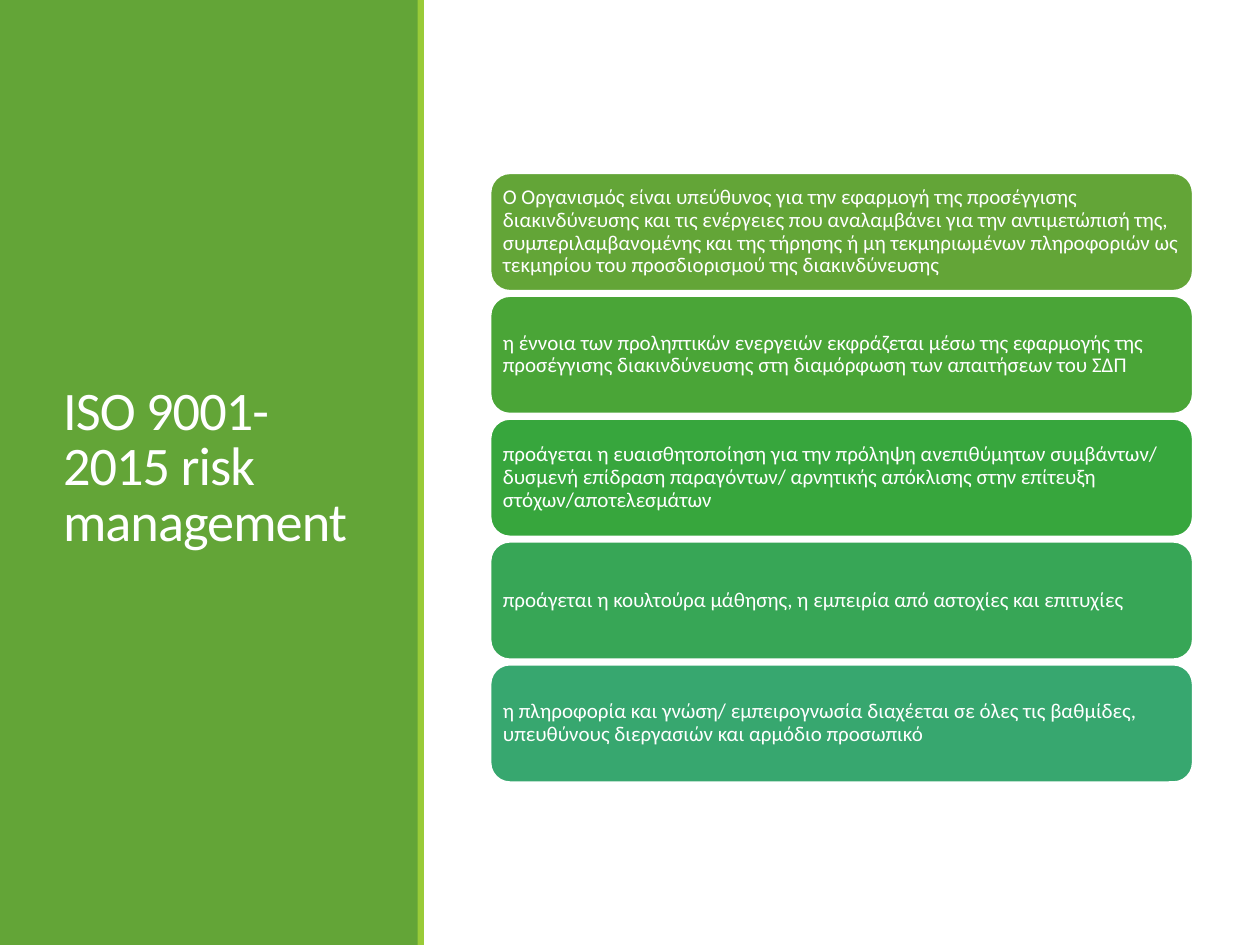
from pptx import Presentation
from pptx.dml.color import RGBColor
from pptx.enum.shapes import MSO_SHAPE
from pptx.enum.text import MSO_ANCHOR, MSO_AUTO_SIZE, PP_ALIGN
from pptx.util import Pt

RECT = MSO_SHAPE.RECTANGLE
ROUND = MSO_SHAPE.ROUNDED_RECTANGLE
MIDDLE = MSO_ANCHOR.MIDDLE
LEFT = PP_ALIGN.LEFT
NO_FIT = MSO_AUTO_SIZE.NONE

COLORS = {
    "white": "FFFFFF",
    "green": "63A537",
    "lime": "99CB38",
    "leaf": "4AA537",
    "grass": "37A63D",
    "jade": "37A656",
    "teal": "37A76F",
}

CARDS = [
    ("green", "Ο Οργανισμός είναι υπεύθυνος για την εφαρμογή της προσέγγισης "
     "διακινδύνευσης και τις ενέργειες που αναλαμβάνει για την αντιμετώπισή της, "
     "συμπεριλαμβανομένης και της τήρησης ή μη τεκμηριωμένων πληροφοριών ως "
     "τεκμηρίου του προσδιορισμού της διακινδύνευσης"),
    ("leaf", "η έννοια των προληπτικών ενεργειών εκφράζεται μέσω της εφαρμογής της "
     "προσέγγισης διακινδύνευσης στη διαμόρφωση των απαιτήσεων του ΣΔΠ"),
    ("grass", "προάγεται η ευαισθητοποίηση για την πρόληψη ανεπιθύμητων συμβάντων/ "
     "δυσμενή επίδραση παραγόντων/ αρνητικής απόκλισης στην επίτευξη "
     "στόχων/αποτελεσμάτων"),
    ("jade", "προάγεται η κουλτούρα μάθησης, η εμπειρία από αστοχίες και επιτυχίες"),
    ("teal", "η πληροφορία και γνώση/ εμπειρογνωσία διαχέεται σε όλες τις βαθμίδες, "
     "υπευθύνους διεργασιών και αρμόδιο προσωπικό"),
]


class Deck:
    """Holds the style and the current slide."""

    font = "Calibri"

    def __init__(self, slide):
        self.slide = slide

    def color(self, name):
        return RGBColor.from_string(COLORS[name])

    def shape(self, kind, box, fill):
        shape = self.slide.shapes.add_shape(kind, *map(Pt, box))
        shape.shadow.inherit = False
        shape.fill.solid()
        shape.fill.fore_color.rgb = self.color(fill)
        shape.line.fill.background()
        return shape

    def label(self, shape, text, size, spacing):
        frame = shape.text_frame
        frame.word_wrap = True
        frame.auto_size = NO_FIT
        frame.vertical_anchor = MIDDLE
        frame.text = text
        para = frame.paragraphs[0]
        para.alignment = LEFT
        para.line_spacing = spacing
        para.font.name = self.font
        para.font.size = Pt(size)
        para.font.color.rgb = self.color("white")
        return frame

    def title(self, text, box):
        title = self.slide.shapes.title
        title.left, title.top, title.width, title.height = map(Pt, box)
        frame = self.label(title, text, 31, 0.85)
        # Tighten the letters and lift the title above the panel
        frame.paragraphs[0].runs[0].font._element.set("spc", "-50")
        self.slide.shapes._spTree.append(title._element)

    def card(self, text, box, fill):
        card = self.shape(ROUND, box, fill)
        card.line.color.rgb = self.color("white")
        card.line.width = Pt(1.25)
        frame = self.label(card, text, 12, 0.9)
        frame.margin_left = frame.margin_right = Pt(3.9)
        frame.margin_top = frame.margin_bottom = Pt(3.9)


def main():
    prs = Presentation()
    prs.slide_width, prs.slide_height = Pt(720), Pt(540)
    deck = Deck(prs.slides.add_slide(prs.slide_layouts[5]))

    # Side panel with title and edge band
    deck.shape(RECT, (0, 0, 239, 540), "green")
    deck.title("ISO 9001-2015 risk management", (28.8, 41, 182.2, 454.3))
    deck.shape(RECT, (238.6, 0, 3.6, 540), "lime")

    # Stack of cards
    left, top, width, height, step = 280.2, 98.9, 401.5, 67.4, 70.2
    for row, (fill, text) in enumerate(CARDS):
        deck.card(text, (left, top + row * step, width, height), fill)

    prs.save("out.pptx")


if __name__ == "__main__":
    main()
